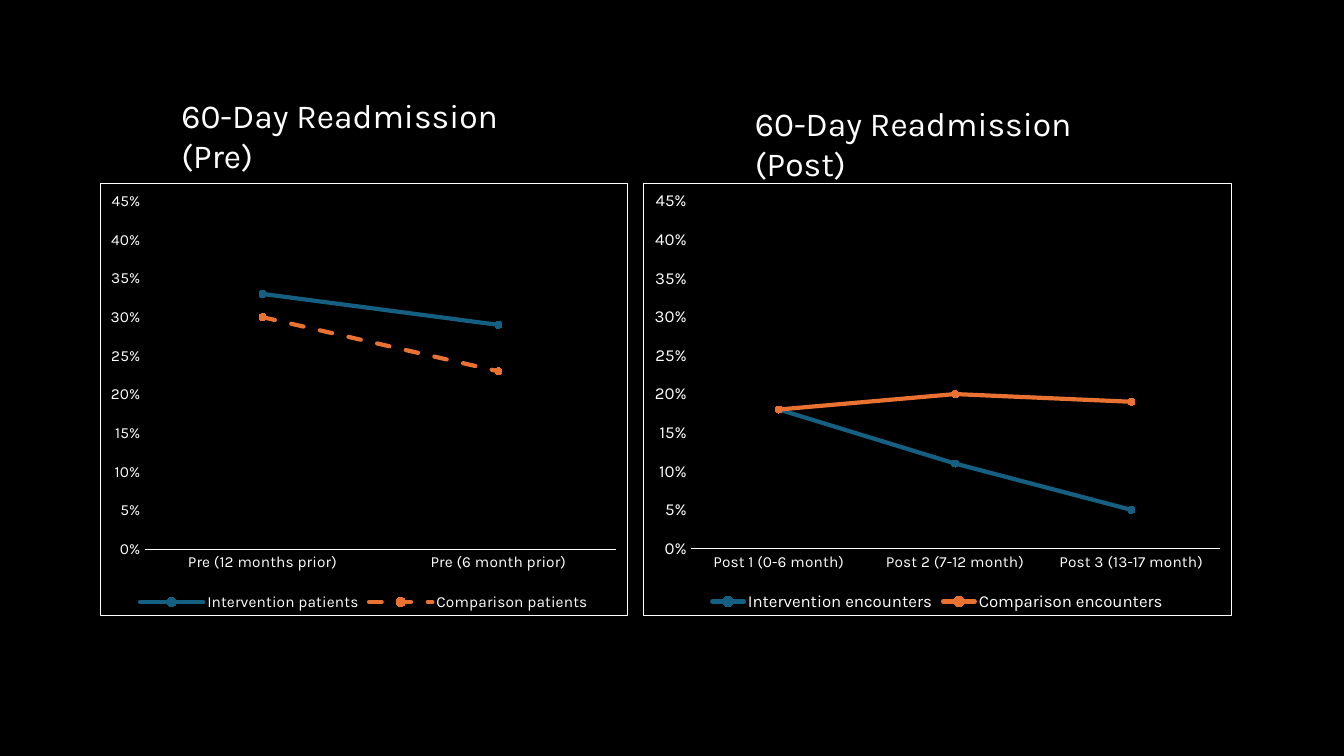
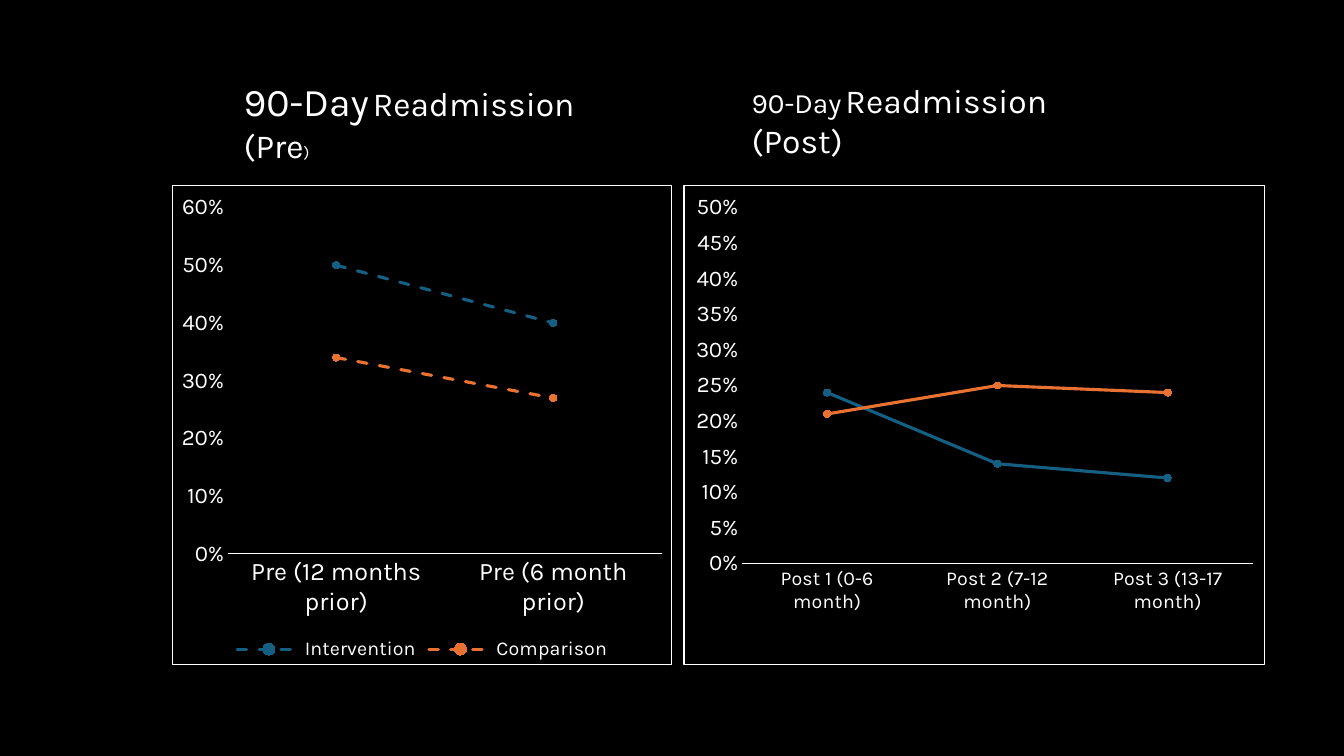
"""Build two slides comparing 60-day and 90-day readmission rates."""
import pptx
import pptx.chart.data
import pptx.dml.color
import pptx.enum.chart
import pptx.enum.dml
import pptx.enum.text
import pptx.oxml
import pptx.oxml.ns
import pptx.util

Pt = pptx.util.Pt
RGBColor = pptx.dml.color.RGBColor

BLACK = RGBColor(0x00, 0x00, 0x00)
WHITE = RGBColor(0xFF, 0xFF, 0xFF)
BLUE = RGBColor(0x15, 0x60, 0x82)
ORANGE = RGBColor(0xE9, 0x71, 0x32)
FONT = "Karla"

PRE_PERIODS = ("Pre (12 months prior)", "Pre (6 month prior)")
POST_PERIODS = ("Post 1 (0-6 month)", "Post 2 (7-12 month)", "Post 3 (13-17 month)")

SIXTY_DAY = (
    dict(title=[("60-Day Readmission (Pre)", 24)], title_box=(122.4, 64.1, 284.4, 36),
         box=(71.3, 131, 377.3, 309), plot=(0.084, 0.04, 0.895, 0.807),
         periods=PRE_PERIODS, top=0.45, step=0.05, weight=3,
         sizes=dict(category=11, value=11, legend=11),
         rates=[("Intervention patients", (0.33, 0.29), BLUE, False),
                ("Comparison patients", (0.3, 0.23), ORANGE, True)]),
    dict(title=[("60-Day Readmission (Post)", 24)], title_box=(532.1, 69.8, 295.9, 36),
         box=(459.4, 131, 420.5, 309), plot=(0.08, 0.04, 0.9, 0.805),
         periods=POST_PERIODS, top=0.45, step=0.05, weight=3,
         sizes=dict(category=11, value=12, legend=12),
         rates=[("Intervention encounters", (0.18, 0.11, 0.05), BLUE, False),
                ("Comparison encounters", (0.18, 0.2, 0.19), ORANGE, False)]),
)
NINETY_DAY = (
    dict(title=[("90-Day", 28), (" ", 12), ("Readmission (Pre", 24), (")", 12)],
         title_box=(167, 51.8, 290.2, 41),
         box=(123.1, 131.8, 357.1, 343.4), plot=(0.11, 0.047, 0.87, 0.722),
         periods=PRE_PERIODS, top=0.6, step=0.1, weight=2.25,
         sizes=dict(category=18, value=16, legend=14),
         rates=[("Intervention", (0.5, 0.4), BLUE, True),
                ("Comparison", (0.34, 0.27), ORANGE, True)]),
    dict(title=[("90-Day", 20), (" ", 12), ("Readmission", 24), (" ", 12), ("(Post)", 24)],
         title_box=(529.9, 53.3, 277.9, 36),
         box=(488.2, 131.8, 415.4, 343.4), plot=(0.1, 0.047, 0.88, 0.742),
         periods=POST_PERIODS, top=0.5, step=0.05, weight=2.25,
         sizes=dict(category=14, value=16),
         rates=[("Intervention", (0.24, 0.14, 0.12), BLUE, False),
                ("Comparison", (0.21, 0.25, 0.24), ORANGE, False)]),
)


def apply(target, settings):
    """Set each named attribute of the target."""
    for name, value in settings.items():
        setattr(target, name, value)


def style_font(font, size):
    """Give a font the shared face and colour at one size."""
    apply(font, dict(name=FONT, size=Pt(size), bold=False))
    font.color.rgb = WHITE


def add_title(slide, box, runs):
    """Add a wrapping heading made of runs of differing size."""
    frame = slide.shapes.add_textbox(*map(Pt, box)).text_frame
    apply(frame, dict(word_wrap=True,
                      auto_size=pptx.enum.text.MSO_AUTO_SIZE.SHAPE_TO_FIT_TEXT))
    for text, size in runs:
        run = frame.paragraphs[0].add_run()
        run.text = text
        style_font(run.font, size)


def frame_chart(chart, plot):
    """Outline the chart and fix its plot area as fractions of its box."""
    namespaces = pptx.oxml.ns.nsdecls("c", "a")
    chart_part = chart._chartSpace.find(pptx.oxml.ns.qn("c:chart"))
    chart_part.addnext(pptx.oxml.parse_xml(
        f'<c:spPr {namespaces}><a:noFill/><a:ln w="{Pt(0.75)}"><a:solidFill>'
        f'<a:srgbClr val="{WHITE}"/></a:solidFill></a:ln></c:spPr>'))
    plot_area = chart_part.find(pptx.oxml.ns.qn("c:plotArea"))
    for layout in plot_area.findall(pptx.oxml.ns.qn("c:layout")):
        plot_area.remove(layout)
    modes = '<c:layoutTarget val="inner"/><c:xMode val="edge"/><c:yMode val="edge"/>'
    edges = "".join(f'<c:{key} val="{part}"/>' for key, part in zip("xywh", plot))
    plot_area.insert(0, pptx.oxml.parse_xml(
        f"<c:layout {namespaces}><c:manualLayout>{modes}{edges}</c:manualLayout></c:layout>"))


def style_axes(chart, top, step, sizes):
    """Style both axes without gridlines or ticks."""
    periods, rates = chart.category_axis, chart.value_axis
    no_tick = pptx.enum.chart.XL_TICK_MARK.NONE
    for axis, size in ((periods, sizes["category"]), (rates, sizes["value"])):
        apply(axis, dict(has_major_gridlines=False, major_tick_mark=no_tick,
                         minor_tick_mark=no_tick))
        style_font(axis.tick_labels.font, size)
    periods.format.line.color.rgb = WHITE
    periods.format.line.width = Pt(0.75)
    apply(rates, dict(minimum_scale=0, maximum_scale=top, major_unit=step))
    apply(rates.tick_labels, dict(number_format="0%", number_format_is_linked=False))
    rates.format.line.fill.background()


def style_series(series, color, dashed, weight):
    """Style one rate line and its round markers."""
    series.smooth = False
    line = series.format.line
    line.color.rgb = color
    dash = pptx.enum.dml.MSO_LINE.DASH if dashed else pptx.enum.dml.MSO_LINE.SOLID
    apply(line, dict(width=Pt(weight), dash_style=dash))
    series._element.find(".//" + pptx.oxml.ns.qn("a:ln")).set("cap", "rnd")
    marker = series.marker
    apply(marker, dict(style=pptx.enum.chart.XL_MARKER_STYLE.CIRCLE, size=5))
    marker.format.fill.solid()
    marker.format.fill.fore_color.rgb = color
    marker.format.line.color.rgb = color


def add_rate_chart(slide, box, plot, periods, top, step, weight, sizes, rates):
    """Add a framed line chart of readmission rates."""
    data = pptx.chart.data.CategoryChartData(number_format="0%")
    data.categories = periods
    for name, values, _, _ in rates:
        data.add_series(name, values)
    chart = slide.shapes.add_chart(
        pptx.enum.chart.XL_CHART_TYPE.LINE_MARKERS, *map(Pt, box), data).chart
    style_font(chart.font, 10)
    apply(chart, dict(has_title=False, has_legend="legend" in sizes))
    if chart.has_legend:
        apply(chart.legend, dict(position=pptx.enum.chart.XL_LEGEND_POSITION.BOTTOM,
                                 include_in_layout=False))
        style_font(chart.legend.font, sizes["legend"])
    chart.plots[0].vary_by_categories = False
    style_axes(chart, top, step, sizes)
    for series, (_, _, color, dashed) in zip(chart.plots[0].series, rates):
        style_series(series, color, dashed, weight)
    frame_chart(chart, plot)


def add_panel(slide, title, title_box, **chart):
    """Add one heading with its chart."""
    add_rate_chart(slide, **chart)
    add_title(slide, title_box, title)


def main():
    """Build and save the presentation."""
    deck = pptx.Presentation()
    apply(deck, dict(slide_width=Pt(960), slide_height=Pt(540)))
    backdrop = deck.slide_master.background.fill
    backdrop.solid()
    backdrop.fore_color.rgb = BLACK
    for panels in (SIXTY_DAY, NINETY_DAY):
        slide = deck.slides.add_slide(deck.slide_layouts[6])
        for panel in panels:
            add_panel(slide, **panel)
    deck.save("out.pptx")


if __name__ == "__main__":
    main()
